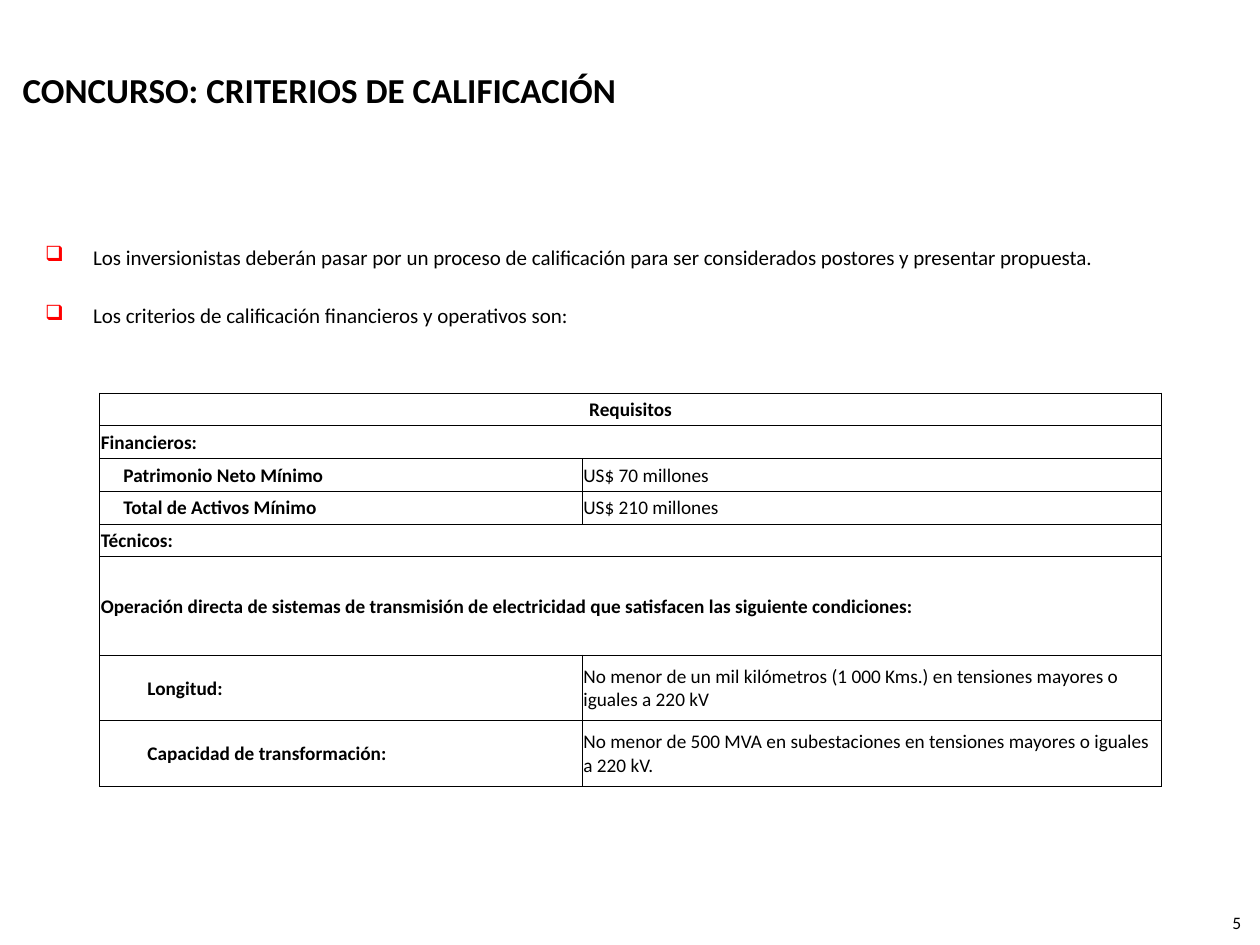
"""Build the slide on the qualification criteria of the tender."""
from lxml import etree
from pptx import Presentation
from pptx.dml.color import RGBColor
from pptx.enum.text import MSO_ANCHOR, PP_ALIGN
from pptx.oxml import parse_xml
from pptx.oxml.ns import nsdecls, qn
from pptx.util import Inches, Pt

LEFT, CENTER, RIGHT = PP_ALIGN.LEFT, PP_ALIGN.CENTER, PP_ALIGN.RIGHT
TOP, MIDDLE = MSO_ANCHOR.TOP, MSO_ANCHOR.MIDDLE
COLORS = {"text": "000000", "bullet": "FF0000", "border": "000000"}


def style_paragraph(paragraph, size, bold=False, align=LEFT):
    paragraph.alignment = align
    paragraph.font.name = "Calibri"
    paragraph.font.size = Pt(size)
    paragraph.font.bold = bold
    paragraph.font.color.rgb = RGBColor.from_string(COLORS["text"])


def add_borders(cell):
    properties = cell._tc.get_or_add_tcPr()
    for side in ("lnL", "lnR", "lnT", "lnB"):
        properties.append(parse_xml(
            f'<a:{side} {nsdecls("a")} w="{Pt(0.5)}"><a:solidFill>'
            f'<a:srgbClr val="{COLORS["border"]}"/></a:solidFill></a:{side}>'))


deck = Presentation()
deck.slide_width, deck.slide_height = Inches(10), Inches(7.5)
page = deck.slides.add_slide(deck.slide_layouts[5])

title = page.shapes.title
title.left, title.top = Inches(0.08), Inches(0.41)
title.width, title.height = Inches(9.45), Inches(0.6)
title.text_frame.text = "CONCURSO: CRITERIOS DE CALIFICACIÓN"
title.text_frame.vertical_anchor = MIDDLE
style_paragraph(title.text_frame.paragraphs[0], 20, bold=True)

bullets = [
    "Los inversionistas deberán pasar por un proceso de calificación para ser "
    "considerados postores y presentar propuesta.",
    "Los criterios de calificación financieros y operativos son:",
]
body = page.shapes.add_textbox(Inches(0.26), Inches(1.89), Inches(9.48), Inches(1))
frame = body.text_frame
frame.word_wrap = True
frame.vertical_anchor = TOP
for index, text in enumerate(bullets):
    para = frame.add_paragraph() if index else frame.paragraphs[0]
    para.text = text
    para.space_before = Pt(19 if index else 0)
    properties = para._p.get_or_add_pPr()
    properties.set("marL", str(Inches(0.38)))
    properties.set("indent", str(-Inches(0.38)))
    bullet_color = etree.SubElement(properties, qn("a:buClr"))
    etree.SubElement(bullet_color, qn("a:srgbClr"), val=COLORS["bullet"])
    etree.SubElement(properties, qn("a:buChar"), char="❑")
    style_paragraph(para, 12)

rows = [
    ("Requisitos", None, 0.01, 0.26),
    ("Financieros:", None, 0.01, 0.26),
    ("Patrimonio Neto Mínimo", "US$ 70 millones", 0.19, 0.26),
    ("Total de Activos Mínimo", "US$ 210 millones", 0.19, 0.26),
    ("Técnicos:", None, 0.01, 0.26),
    ("Operación directa de sistemas de transmisión de electricidad que "
     "satisfacen las siguiente condiciones:", None, 0.01, 0.78),
    ("Longitud:", "No menor de un mil kilómetros (1 000 Kms.) en tensiones "
     "mayores o iguales a 220 kV", 0.38, 0.52),
    ("Capacidad de transformación:", "No menor de 500 MVA en subestaciones en "
     "tensiones mayores o iguales a 220 kV.", 0.38, 0.52),
]
table = page.shapes.add_table(len(rows), 2, Inches(0.79), Inches(3.12),
                              Inches(8.43), Inches(3.12)).table
table.first_row = table.horz_banding = False
for column, width in zip(table.columns, (3.83, 4.6)):
    column.width = Inches(width)
for row_index, (label, value, indent, height) in enumerate(rows):
    table.rows[row_index].height = Inches(height)
    label_cell, value_cell = table.rows[row_index].cells
    if value is None:
        label_cell.merge(value_cell)
    for cell, text, margin in ((label_cell, label, indent), (value_cell, value, 0.01)):
        add_borders(cell)
        cell.fill.background()
        cell.vertical_anchor = MIDDLE
        cell.margin_left = Inches(margin)
        cell.margin_right = cell.margin_top = Inches(0.01)
        cell.margin_bottom = 0
        if text:
            cell.text = text
        style_paragraph(cell.text_frame.paragraphs[0], 11, bold=cell is label_cell,
                        align=LEFT if row_index else CENTER)

number = page.shapes.add_textbox(Inches(9.45), Inches(7.19), Inches(0.5), Inches(0.32))
number.text_frame.word_wrap = True
number.text_frame.text = "5"
style_paragraph(number.text_frame.paragraphs[0], 10, align=RIGHT)

deck.save("out.pptx")
